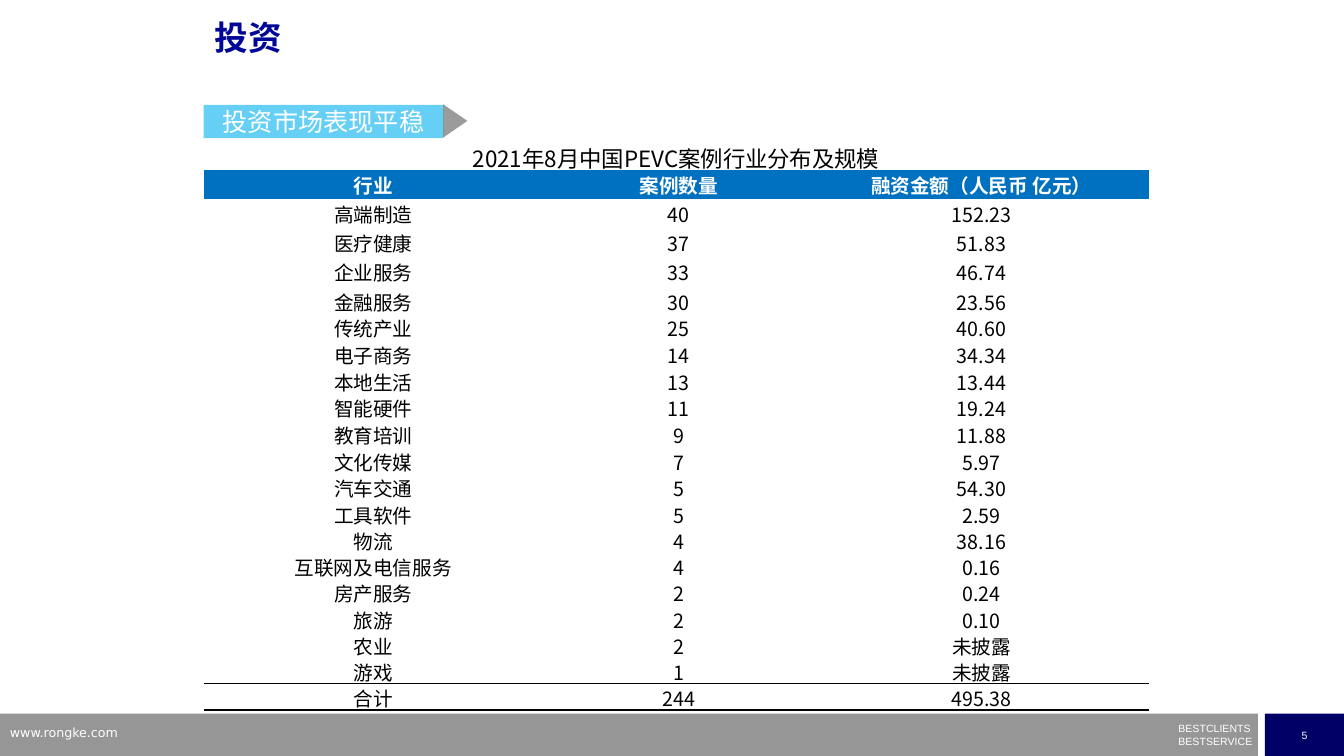
"""Build the slide on investment cases by industry."""
import dataclasses
import typing

import lxml.etree
import pptx
import pptx.dml.color
import pptx.enum.shapes
import pptx.enum.text
import pptx.oxml.ns
import pptx.util

SLIDE_WIDTH = pptx.util.Inches(13.33)
SLIDE_HEIGHT = pptx.util.Inches(7.5)
CJK = "Noto Sans CJK SC"
NO_GRID_STYLE = "{2D5ABB26-0587-4C30-8999-92F81FD0307C}"
COLOURS = {
    "white": "FFFFFF", "black": "000000", "grey": "969696", "navy": "000066",
    "title": "000798", "sky": "00B0F0", "slate": "595959", "header": "0070C0",
}
ALIGN = pptx.enum.text.PP_ALIGN
ANCHOR = pptx.enum.text.MSO_ANCHOR
SHAPE = pptx.enum.shapes.MSO_SHAPE

COLUMN_SHARES = (25.26, 20.18, 24.88)
ROW_SHARES = (3.87, 3.73) + (3.87,) * 3 + (3.53,) * 7 + (3.47,) * 6 + (3.53,) * 2 + (3.47,)
CAPTION = "2021年8月中国PEVC案例行业分布及规模"
HEADINGS = ("行业", "案例数量", "融资金额（人民币 亿元）")
INDUSTRIES = (
    ("高端制造", "40", "152.23"),
    ("医疗健康", "37", "51.83"),
    ("企业服务", "33", "46.74"),
    ("金融服务", "30", "23.56"),
    ("传统产业", "25", "40.60"),
    ("电子商务", "14", "34.34"),
    ("本地生活", "13", "13.44"),
    ("智能硬件", "11", "19.24"),
    ("教育培训", "9", "11.88"),
    ("文化传媒", "7", "5.97"),
    ("汽车交通", "5", "54.30"),
    ("工具软件", "5", "2.59"),
    ("物流", "4", "38.16"),
    ("互联网及电信服务", "4", "0.16"),
    ("房产服务", "2", "0.24"),
    ("旅游", "2", "0.10"),
    ("农业", "2", "未披露"),
    ("游戏", "1", "未披露"),
)
TOTAL = ("合计", "244", "495.38")


@dataclasses.dataclass(frozen=True)
class Area:
    left: float
    top: float
    width: float
    height: float

    def lengths(self) -> tuple[int, int, int, int]:
        return across(self.left), down(self.top), across(self.width), down(self.height)


@dataclasses.dataclass(frozen=True)
class Style:
    size: float
    colour: str
    font: str = CJK
    bold: bool = False
    align: ALIGN = ALIGN.CENTER


@dataclasses.dataclass(frozen=True)
class Block:
    kind: SHAPE
    area: Area
    colour: str
    opacity: int = 100
    rotation: int = 0
    text: str = ""
    style: typing.Optional[Style] = None


FOOTER_STYLE = Style(7.5, "white", "Arial")
FOOTER = (
    Block(SHAPE.RECTANGLE, Area(0, 94.4, 93.6, 5.6), "grey"),
    Block(SHAPE.RECTANGLE, Area(94.12, 94.4, 5.88, 5.6), "navy", text="5", style=FOOTER_STYLE),
)
TAG = (
    Block(SHAPE.RECTANGLE, Area(15.15, 13.87, 17.85, 4.4), "sky", 60,
          text="投资市场表现平稳", style=Style(18, "white")),
    Block(SHAPE.ISOSCELES_TRIANGLE, Area(32.63, 14.4, 2.48, 3.2), "slate", 60, 90),
)


def across(share: float) -> int:
    return round(SLIDE_WIDTH * share / 100)


def down(share: float) -> int:
    return round(SLIDE_HEIGHT * share / 100)


def rgb(name: str) -> pptx.dml.color.RGBColor:
    return pptx.dml.color.RGBColor.from_string(COLOURS[name])


def child(parent: typing.Any, tag: str, **attributes: str) -> typing.Any:
    return lxml.etree.SubElement(parent, pptx.oxml.ns.qn(tag), attributes)


def write(para: typing.Any, text: str, style: Style) -> None:
    para.alignment = style.align
    span = para.add_run()
    span.text = text
    span.font.size = pptx.util.Pt(style.size)
    span.font.bold = style.bold
    span.font.color.rgb = rgb(style.colour)
    span.font.name = style.font
    child(span.font._element, "a:ea", typeface=CJK)


def draw_block(shapes: typing.Any, block: Block) -> None:
    shape = shapes.add_shape(block.kind, *block.area.lengths())
    shape.shadow.inherit = False
    shape.rotation = block.rotation
    shape.line.fill.background()
    shape.fill.solid()
    shape.fill.fore_color.rgb = rgb(block.colour)
    if block.opacity < 100:
        tint = shape._element.spPr.find(".//" + pptx.oxml.ns.qn("a:srgbClr"))
        child(tint, "a:alpha", val=str(block.opacity * 1000))
    if block.style:
        shape.text_frame.vertical_anchor = ANCHOR.MIDDLE
        write(shape.text_frame.paragraphs[0], block.text, block.style)


def add_box(page: typing.Any, area: Area) -> typing.Any:
    box = page.shapes.add_textbox(*area.lengths()).text_frame
    box.word_wrap = True
    return box


def set_margins(target: typing.Any, inches: float) -> None:
    for side in ("left", "right", "top", "bottom"):
        setattr(target, f"margin_{side}", pptx.util.Inches(inches))


def draw_rule(cell: typing.Any, tag: str, position: int) -> None:
    properties = cell._tc.get_or_add_tcPr()
    line = child(properties, tag, w=str(pptx.util.Pt(1)))
    child(child(line, "a:solidFill"), "a:srgbClr", val=COLOURS["black"])
    properties.insert(position, line)


def fill_cell(cell: typing.Any, text: str, style: Style, colour: str, margin: float) -> None:
    cell.vertical_anchor = ANCHOR.MIDDLE
    set_margins(cell, margin)
    if colour:
        cell.fill.solid()
        cell.fill.fore_color.rgb = rgb(colour)
    write(cell.text_frame.paragraphs[0], text, style)


def draw_table(page: typing.Any) -> None:
    area = Area(15.15, 18.67, sum(COLUMN_SHARES), sum(ROW_SHARES))
    frame = page.shapes.add_table(len(ROW_SHARES), len(COLUMN_SHARES), *area.lengths())
    table = frame.table
    table.first_row = table.horz_banding = False
    table._tbl.tblPr.find(pptx.oxml.ns.qn("a:tableStyleId")).text = NO_GRID_STYLE
    for column, share in zip(table.columns, COLUMN_SHARES):
        column.width = across(share)
    for row, share in zip(table.rows, ROW_SHARES):
        row.height = down(share)
    table.cell(0, 0).merge(table.cell(0, len(COLUMN_SHARES) - 1))
    fill_cell(table.cell(0, 0), CAPTION, Style(16, "black"), "", 0)
    last = len(ROW_SHARES) - 1
    for row, texts in enumerate((HEADINGS, *INDUSTRIES, TOTAL), start=1):
        heading = row == 1
        style = Style(14, "white" if heading else "black", bold=heading)
        for column, text in enumerate(texts):
            cell = table.cell(row, column)
            margin = 0 if row in (1, last) else 0.01
            fill_cell(cell, text, style, "header" if heading else "white", margin)
            if row == last:
                draw_rule(cell, "a:lnT", 0)
                draw_rule(cell, "a:lnB", 1)
            elif row == last - 1:
                draw_rule(cell, "a:lnB", 0)


def main() -> None:
    deck = pptx.Presentation()
    deck.slide_width, deck.slide_height = SLIDE_WIDTH, SLIDE_HEIGHT
    page = deck.slides.add_slide(deck.slide_layouts[5])
    for block in FOOTER:
        draw_block(page.shapes, block)
    slogan = add_box(page, Area(87.68, 96.27, 5.7, 2.67))
    set_margins(slogan, 0)
    slogan_style = dataclasses.replace(FOOTER_STYLE, align=ALIGN.LEFT)
    for index, text in enumerate(("BESTCLIENTS", "BESTSERVICE")):
        para = slogan.add_paragraph() if index else slogan.paragraphs[0]
        para.line_spacing = 0.5
        para.space_before = pptx.util.Pt(4.3 * index)
        write(para, text, slogan_style)
    address = add_box(page, Area(0, 95.2, 24, 3.47))
    write(address.paragraphs[0], "www.rongke.com", Style(9, "white", "DejaVu Sans", align=ALIGN.LEFT))
    tag = page.shapes.add_group_shape()
    for block in TAG:
        draw_block(tag.shapes, block)
    title = page.shapes.title
    title.left, title.top, title.width, title.height = Area(15.23, 2.13, 67.5, 9.33).lengths()
    title.text_frame.vertical_anchor = ANCHOR.TOP
    title.text_frame.paragraphs[0].line_spacing = 0.9
    write(title.text_frame.paragraphs[0], "投资", Style(24, "title", "Arial", True, ALIGN.LEFT))
    draw_table(page)
    deck.save("out.pptx")


if __name__ == "__main__":
    main()
